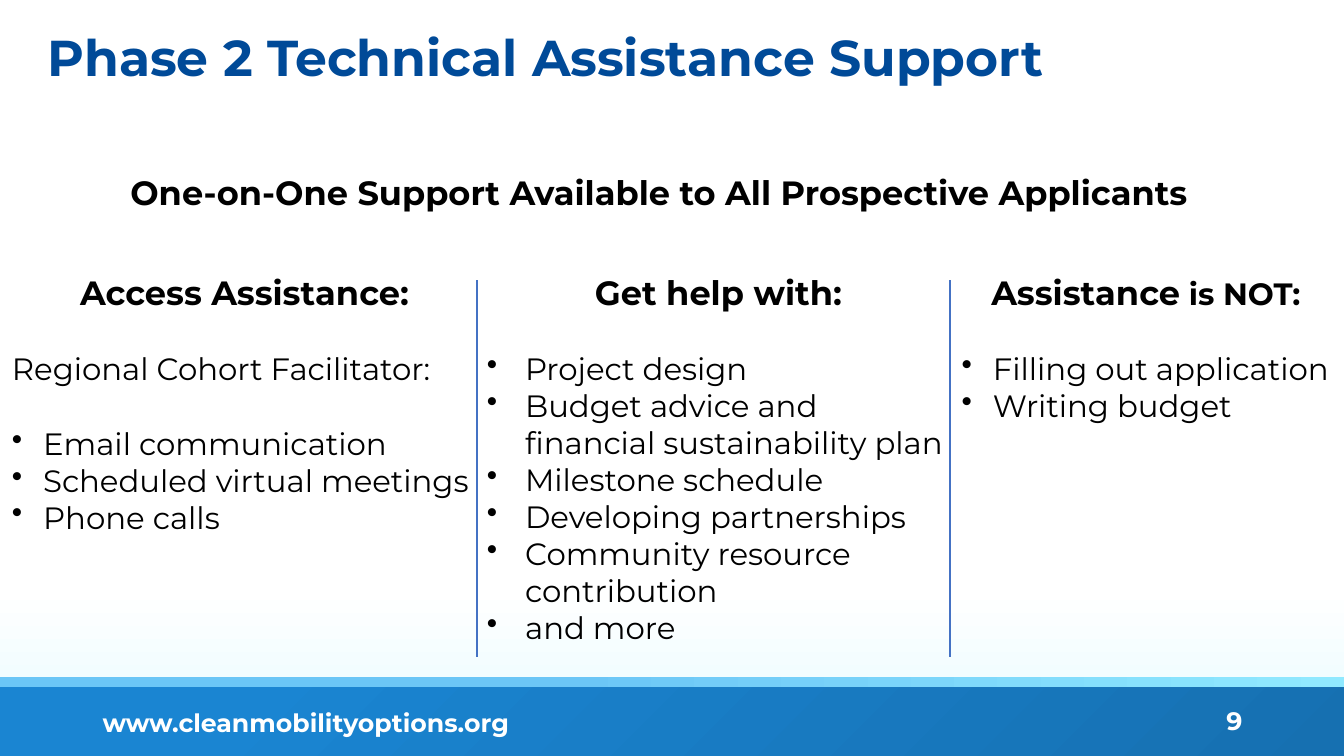
from dataclasses import dataclass

from lxml import etree
from pptx import Presentation
from pptx.dml.color import RGBColor
from pptx.enum.shapes import MSO_CONNECTOR, MSO_SHAPE
from pptx.enum.text import MSO_ANCHOR, MSO_AUTO_SIZE, PP_ALIGN
from pptx.oxml.ns import qn
from pptx.util import Inches, Pt

RECTANGLE = MSO_SHAPE.RECTANGLE
STRAIGHT = MSO_CONNECTOR.STRAIGHT
LEFT, CENTER, RIGHT = PP_ALIGN.LEFT, PP_ALIGN.CENTER, PP_ALIGN.RIGHT
TOP, MIDDLE = MSO_ANCHOR.TOP, MSO_ANCHOR.MIDDLE


@dataclass(frozen=True)
class Theme:
    font: str = "Montserrat"
    title_color: str = "004A98"
    ink: str = "000000"
    white: str = "FFFFFF"
    divider: str = "4472C4"
    title: float = 36
    heading: float = 24
    body: float = 22
    footer: float = 18
    blank_line: float = 26.8


theme = Theme()


def add_span(para, text, size, color=theme.ink, bold=True):
    span = para.add_run()
    span.text = text
    span.font.name = theme.font
    span.font.size = Pt(size)
    span.font.bold = bold
    span.font.color.rgb = RGBColor.from_string(color)


def add_box(left, top, width, height, align=LEFT, anchor=TOP):
    box = slide.shapes.add_textbox(Inches(left), Inches(top), Inches(width), Inches(height))
    frame = box.text_frame
    frame.word_wrap = True
    frame.vertical_anchor = anchor
    frame.paragraphs[0].alignment = align
    return frame


deck = Presentation()
deck.slide_width = Inches(13.33)
deck.slide_height = Inches(7.5)
slide = deck.slides.add_slide(deck.slide_layouts[5])

bands = [
    (5.82, 1.68, 90, [(0, "E5FBFE"), (1, theme.white)]),
    (6.81, 0.69, 135, [(0, "1670B1"), (0.83, "1A85D2")]),
    (6.72, 0.1, 0, [(0.42, "6BC6F6"), (1, "90E9FF")]),
]
for top, height, angle, stops in bands:
    band = slide.shapes.add_shape(RECTANGLE, 0, Inches(top), deck.slide_width, Inches(height))
    band.shadow.inherit = False
    band.line.fill.background()
    band.fill.gradient()
    band.fill.gradient_angle = angle
    for stop, (position, color) in zip(band.fill.gradient_stops, stops):
        stop.position = position
        stop.color.rgb = RGBColor.from_string(color)

title = slide.shapes.title
title.left, title.top = Inches(0.34), Inches(0.19)
title.width, title.height = Inches(10.41), Inches(0.74)
frame = title.text_frame
frame.word_wrap = True
frame.auto_size = MSO_AUTO_SIZE.NONE
frame.vertical_anchor = TOP
frame.margin_left = frame.margin_right = Inches(0.13)
frame.margin_top = frame.margin_bottom = Inches(0.07)
para = frame.paragraphs[0]
para.alignment = LEFT
para.space_after = Pt(8)
add_span(para, "Phase 2 Technical Assistance Support", theme.title, theme.title_color)

subtitle = add_box(-0.09, 1.66, 13.25, 0.5, CENTER)
add_span(
    subtitle.paragraphs[0],
    "One-on-One Support Available to All Prospective Applicants",
    theme.heading,
)

columns = [
    (0.02, 4.81, 3.4, 0.31,
     [("Access Assistance:", theme.heading)],
     "Regional Cohort Facilitator:",
     ["Email communication", "Scheduled virtual meetings", "Phone calls"]),
    (4.73, 4.79, 3.84, 0.38,
     [("Get help with:", theme.heading)],
     None,
     ["Project design", "Budget advice and financial sustainability plan",
      "Milestone schedule", "Developing partnerships",
      "Community resource contribution", "and more"]),
    (9.44, 3.85, 2.29, 0.31,
     [("Assistance", theme.heading), (" is NOT:", theme.body)],
     None,
     ["Filling out application", "Writing budget"]),
]
for left, width, height, indent, heading, intro, items in columns:
    frame = add_box(left, 2.65, width, height, CENTER)
    for text, size in heading:
        add_span(frame.paragraphs[0], text, size)
    if intro:
        para = frame.add_paragraph()
        para.space_before = Pt(theme.blank_line)
        add_span(para, intro, theme.body, bold=False)
    for index, item in enumerate(items):
        para = frame.add_paragraph()
        properties = para._p.get_or_add_pPr()
        properties.set("marL", str(Inches(indent)))
        properties.set("indent", str(-Inches(indent)))
        bullet_color = etree.SubElement(properties, qn("a:buClr"))
        etree.SubElement(bullet_color, qn("a:srgbClr"), val=theme.ink)
        etree.SubElement(properties, qn("a:buChar"), char="•")
        if index == 0:
            para.space_before = Pt(theme.blank_line)
        add_span(para, item, theme.body, bold=False)

for x in (4.73, 9.42):
    divider = slide.shapes.add_connector(STRAIGHT, Inches(x), Inches(2.78), Inches(x), Inches(6.52))
    divider.line.color.rgb = RGBColor.from_string(theme.divider)
    divider.line.width = Pt(1.5)
    etree.SubElement(divider._element.spPr, qn("a:effectLst"))

footers = [
    (0.92, 6.97, 5.88, LEFT, "www.cleanmobilityoptions.org"),
    (9.42, 6.95, 3, RIGHT, "9"),
]
for left, top, width, align, text in footers:
    frame = add_box(left, top, width, 0.4, align, MIDDLE)
    add_span(frame.paragraphs[0], text, theme.footer, theme.white)

deck.save("out.pptx")
